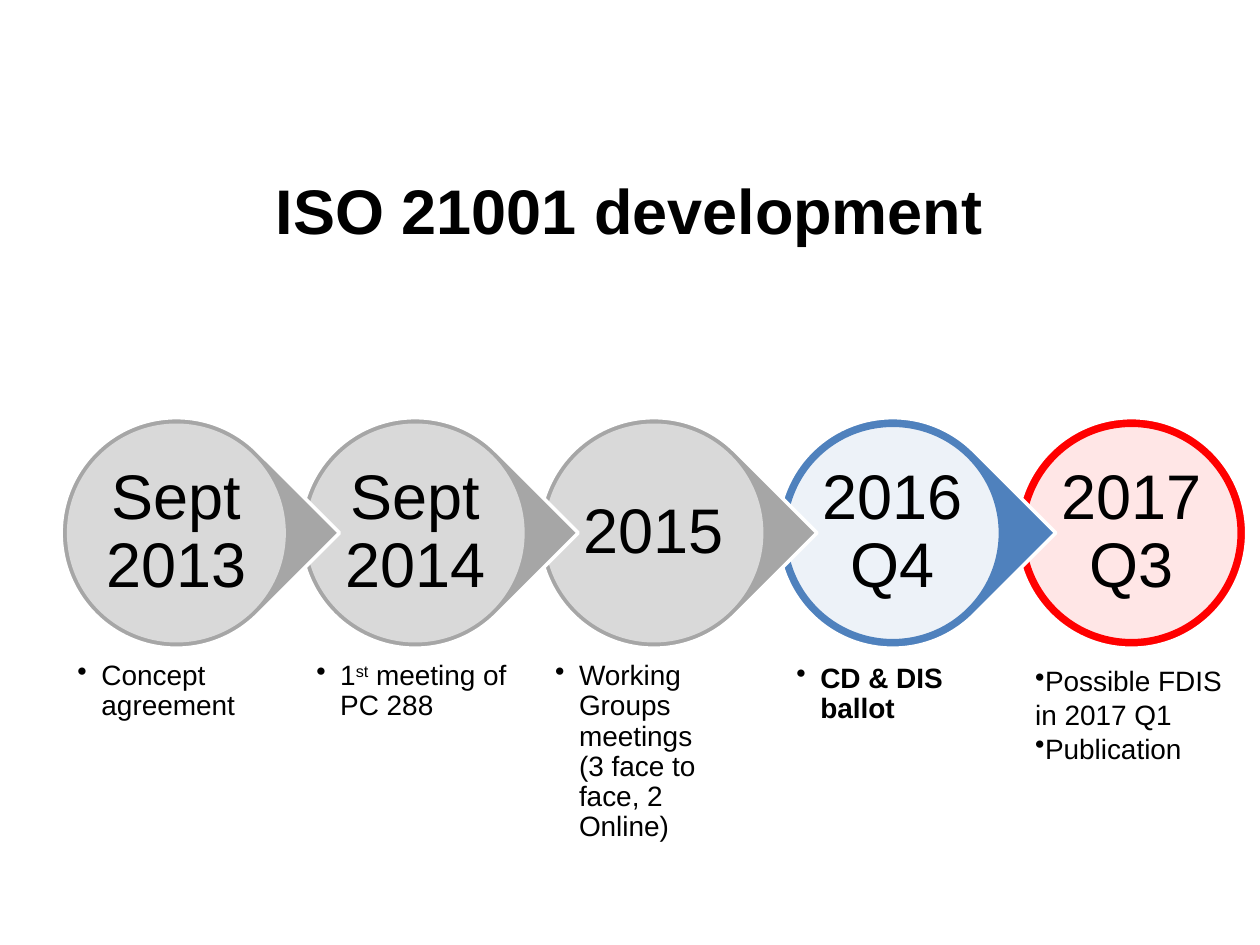
from lxml import etree
from pptx import Presentation
from pptx.dml.color import RGBColor
from pptx.enum import shapes, text
from pptx.oxml import ns
from pptx.util import Inches, Pt

BLACK = RGBColor(0, 0, 0)
WHITE = RGBColor(255, 255, 255)
GRAY = RGBColor(0xA6, 0xA6, 0xA6)
LIGHT_GRAY = RGBColor(0xD9, 0xD9, 0xD9)
BLUE = RGBColor(0x4F, 0x81, 0xBD)
RED = RGBColor(255, 0, 0)

PITCH = 1.895
MARKER, DISC, LABEL = 1.83, 1.71, 1.22
MIDDLE = 4.23

# Each bullet is a list of (words, baseline) runs.
MILESTONES = [
    ("Sept 2013", GRAY, [[("Concept agreement", 0)]]),
    ("Sept 2014", GRAY, [[("1", 0), ("st", 30000), (" meeting of PC 288", 0)]]),
    ("2015", GRAY, [[("Working Groups meetings\v(3 face to face, 2 Online)", 0)]]),
    ("2016 Q4", BLUE, [[("CD & DIS ballot", 0)]]),
    ("2017 Q3", RED, [[("Possible FDIS in 2017 Q1", 0)], [("Publication", 0)]]),
]


def add_round(page, kind, center, size, fill, line):
    shape = page.shapes.add_shape(kind, Inches(center - size / 2), Inches(MIDDLE - size / 2),
                                  Inches(size), Inches(size))
    shape.shadow.inherit = False
    shape.fill.solid()
    shape.fill.fore_color.rgb = fill
    shape.line.color.rgb = line
    shape.line.width = Pt(2)
    return shape


def add_box(page, left, top, width, height, inset):
    box = page.shapes.add_textbox(Inches(left), Inches(top), Inches(width), Inches(height))
    frame = box.text_frame
    frame.word_wrap = True
    frame.margin_left = frame.margin_right = Inches(inset)
    frame.margin_top = frame.margin_bottom = Inches(inset)
    return frame


deck = Presentation()
deck.slide_width, deck.slide_height = Inches(10), Inches(7.5)
page = deck.slides.add_slide(deck.slide_layouts[5])

title = page.shapes.title
title.left, title.top = Inches(0.62), Inches(1.19)
title.width, title.height = Inches(8.75), Inches(0.95)
title.text_frame.text = "ISO 21001 development"
title.text_frame.vertical_anchor = text.MSO_ANCHOR.MIDDLE
para = title.text_frame.paragraphs[0]
para.alignment = text.PP_ALIGN.CENTER
para.font.name, para.font.size, para.font.bold = "Arial", Pt(36), True
para.font.color.rgb = BLACK

for index, (date, color, bullets) in reversed(list(enumerate(MILESTONES))):
    center = 1.4 + PITCH * index
    last = index == len(MILESTONES) - 1

    kind = shapes.MSO_SHAPE.OVAL if last else shapes.MSO_SHAPE.TEAR
    marker = add_round(page, kind, center, MARKER, color, WHITE)
    if not last:
        marker.rotation = 45

    if color == GRAY:
        add_round(page, shapes.MSO_SHAPE.OVAL, center, DISC, LIGHT_GRAY, LIGHT_GRAY)
    else:
        disc = add_round(page, shapes.MSO_SHAPE.OVAL, center, DISC, WHITE, color)
        tint = disc._element.spPr.find(ns.qn("a:solidFill"))[0]
        etree.SubElement(tint, ns.qn("a:alpha")).set("val", "90000")

    frame = add_box(page, center - LABEL / 2, MIDDLE - LABEL / 2, LABEL, LABEL, 0.05)
    frame.vertical_anchor = text.MSO_ANCHOR.MIDDLE
    frame.text = date
    para = frame.paragraphs[0]
    para.alignment = text.PP_ALIGN.CENTER
    para.line_spacing = 0.9
    para.font.name, para.font.size = "Arial", Pt(36)
    para.font.color.rgb = BLACK

    frame = add_box(page, center - DISC / 2, 5.18, DISC, 1, 0.07 if color == GRAY else 0.09)
    for number, bullet in enumerate(bullets):
        para = frame.add_paragraph() if number else frame.paragraphs[0]
        para.level = 1
        para.font.name, para.font.size = "Arial", Pt(16)
        para.font.bold = color == BLUE
        para.font.color.rgb = BLACK
        indent = 0 if last else Inches(0.19)
        if not last:
            para.line_spacing = 0.9
        settings = para._p.get_or_add_pPr()
        settings.set("marL", str(indent))
        settings.set("indent", str(-indent))
        mark = etree.Element(ns.qn("a:buChar"), char="•")
        settings.find(ns.qn("a:defRPr")).addprevious(mark)
        for words, baseline in bullet:
            if "\v" in words:
                first, second = words.split("\v")
                para.add_run().text = first
                para.add_line_break()
                words = second
            span = para.add_run()
            span.text = words
            if baseline:
                span._r.get_or_add_rPr().set("baseline", str(baseline))

deck.save("out.pptx")
